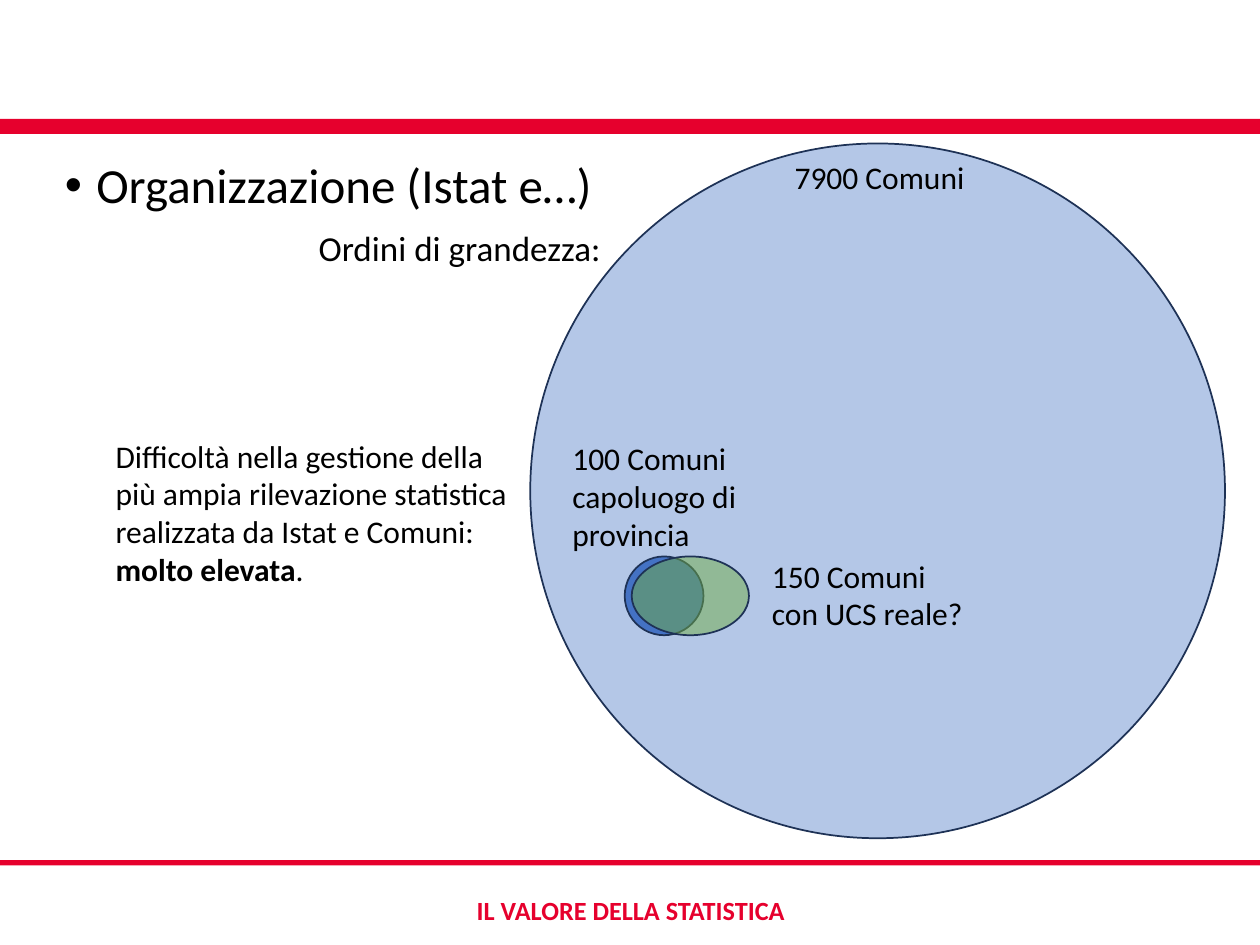
from dataclasses import dataclass

from lxml.etree import SubElement
from pptx import Presentation
from pptx.dml.color import RGBColor
from pptx.enum.shapes import MSO_SHAPE as Shape
from pptx.enum.text import PP_ALIGN as Align
from pptx.oxml.ns import qn
from pptx.util import Pt


@dataclass(frozen=True)
class Theme:
    font: str = "Calibri"
    red: str = "E6002D"
    black: str = "000000"
    outline: str = "1E3256"
    all_towns: str = "B4C7E7"
    capitals: str = "4472C4"
    real_offices: str = "70AD47"
    heading: int = 28
    subheading: int = 20
    body: int = 18
    footer: int = 15


THEME = Theme()
SLIDE_WIDTH, SLIDE_HEIGHT = 720, 540


def add_filled(slide, kind, box, color, outline=None, opacity=None):
    """Add a preset shape; opacity is a percentage."""
    shape = slide.shapes.add_shape(kind, *map(Pt, box))
    shape.shadow.inherit = False
    shape.fill.solid()
    shape.fill.fore_color.rgb = RGBColor.from_string(color)
    if opacity is not None:
        color_element = shape.fill._xPr.find(qn("a:solidFill"))[0]
        SubElement(color_element, qn("a:alpha"), val=str(opacity * 1000))
    if outline:
        shape.line.color.rgb = RGBColor.from_string(outline)
        shape.line.width = Pt(1)
    else:
        shape.line.fill.background()
    return shape


def add_bar(slide, top, height):
    add_filled(slide, Shape.RECTANGLE, (0, top, SLIDE_WIDTH, height), THEME.red)


def add_set(slide, box, color, opacity=None):
    """Add one ellipse of the Venn diagram."""
    add_filled(slide, Shape.OVAL, box, color, THEME.outline, opacity)


def add_text_frame(slide, box):
    frame = slide.shapes.add_textbox(*map(Pt, box)).text_frame
    frame.word_wrap = True
    return frame


def write(paragraph, text, size=THEME.body, color=THEME.black, bold=False, align=None):
    """Append text to a paragraph; each newline becomes a line break."""
    if align is not None:
        paragraph.alignment = align
    for index, line in enumerate(text.split("\n")):
        if index:
            paragraph.add_line_break()
        if line:
            run = paragraph.add_run()
            run.text = line
            run.font.name = THEME.font
            run.font.size = Pt(size)
            run.font.bold = bold
            run.font.color.rgb = RGBColor.from_string(color)


def add_label(slide, box, text, **text_format):
    paragraph = add_text_frame(slide, box).paragraphs[0]
    write(paragraph, text, **text_format)
    return paragraph


def indent(paragraph, left, first=0, bullet=None):
    properties = paragraph._p.get_or_add_pPr()
    properties.set("marL", str(Pt(left)))
    properties.set("indent", str(Pt(first)))
    if bullet:
        SubElement(properties, qn("a:buFont"), typeface="Arial")
        SubElement(properties, qn("a:buChar"), char=bullet)
    paragraph.line_spacing = 0.9


def add_heading(slide):
    frame = add_text_frame(slide, (30, 88.5, 662, 391))
    heading = frame.paragraphs[0]
    indent(heading, 18, -18, "•")
    write(heading, "Organizzazione (Istat e…)", size=THEME.heading)
    subheading = frame.add_paragraph()
    indent(subheading, 145)
    subheading.space_before = Pt(10)
    write(subheading, "Ordini di grandezza:", size=THEME.subheading)


def add_venn_diagram(slide):
    add_set(slide, (303, 82, 397, 397), THEME.all_towns)
    add_set(slide, (357, 318, 45, 45), THEME.capitals)
    add_set(slide, (361, 318, 67, 45), THEME.real_offices, opacity=50)
    add_label(slide, (447, 86.5, 139, 29), "7900 Comuni")
    add_label(slide, (320, 247.5, 119, 73), "100 Comuni capoluogo di provincia")
    add_label(slide, (434, 314.5, 131, 51), "150 Comuni con UCS reale?")


def main():
    presentation = Presentation()
    presentation.slide_width, presentation.slide_height = Pt(SLIDE_WIDTH), Pt(SLIDE_HEIGHT)
    slide = presentation.slides.add_slide(presentation.slide_layouts[6])

    add_bar(slide, 491.5, 3)
    add_label(slide, (152.5, 507.5, 416, 25), "IL VALORE DELLA STATISTICA",
              size=THEME.footer, color=THEME.red, bold=True, align=Align.CENTER)
    add_bar(slide, 68, 8.5)
    add_heading(slide)
    add_venn_diagram(slide)

    difficulty = add_label(
        slide, (59, 246, 271, 117),
        "Difficoltà nella gestione della\npiù ampia rilevazione statistica\n"
        "realizzata da Istat e Comuni:\n")
    write(difficulty, "molto elevata", bold=True)
    write(difficulty, ".")

    presentation.save("out.pptx")


if __name__ == "__main__":
    main()
